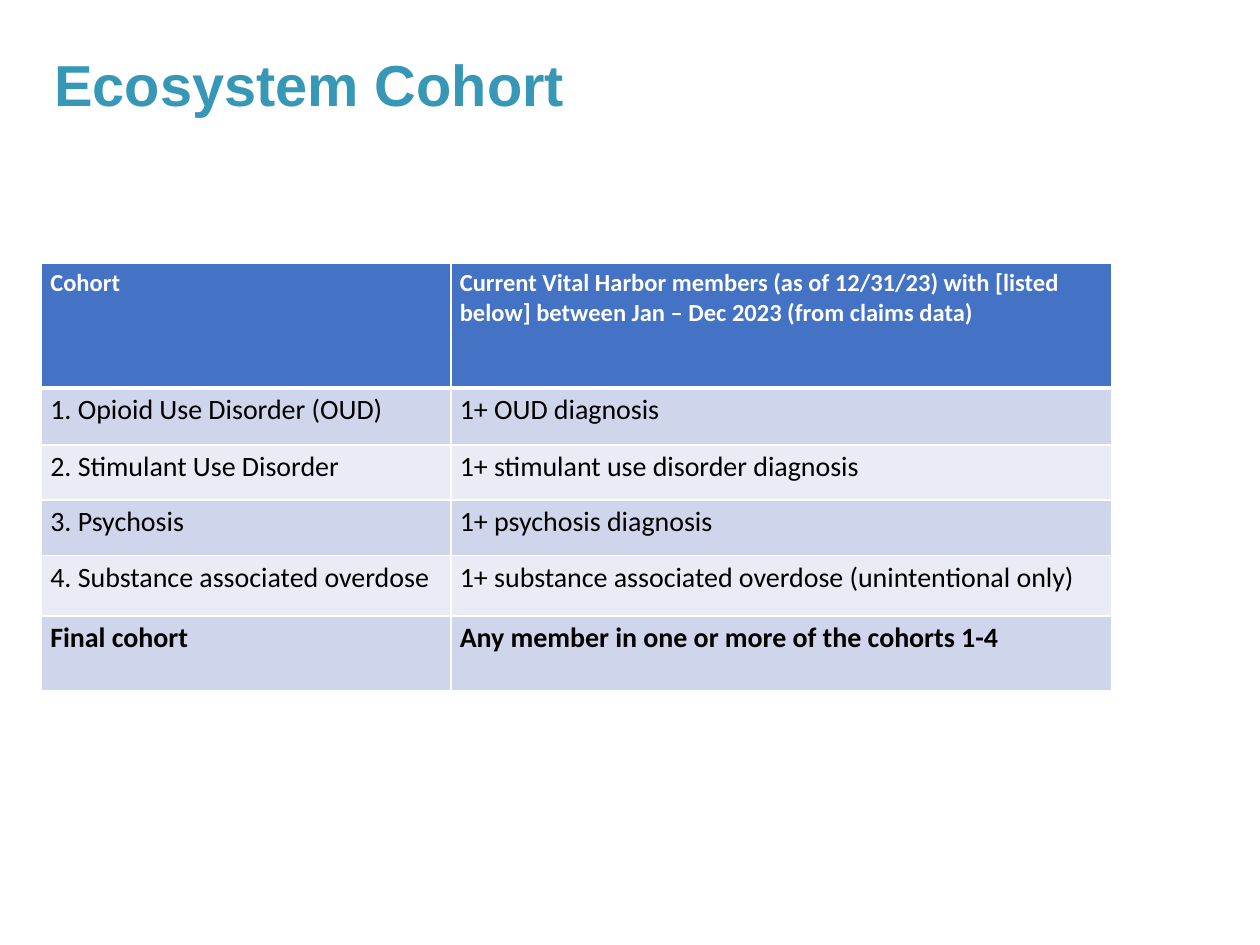
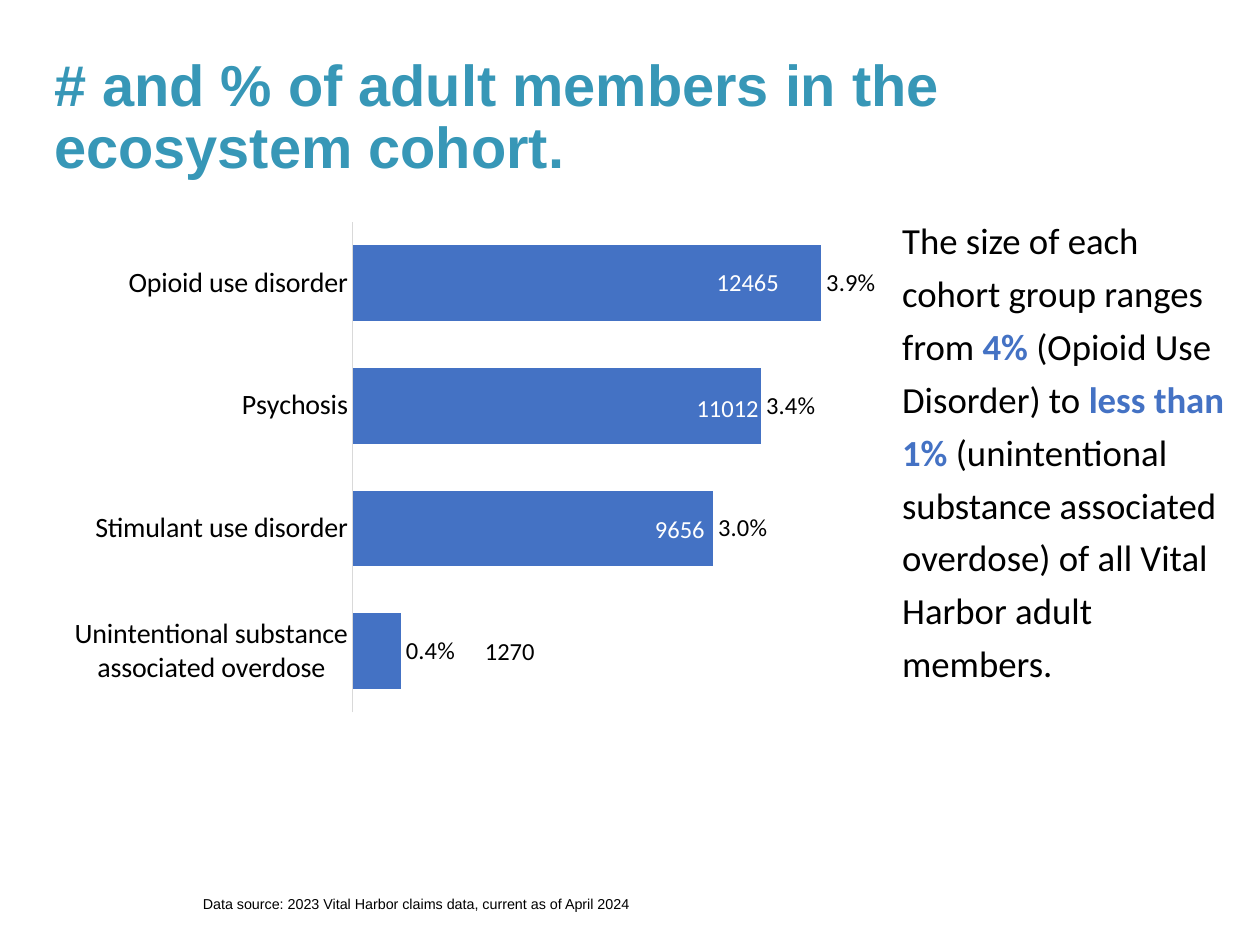
from lxml import etree
from pptx import Presentation
from pptx.chart.data import CategoryChartData
from pptx.dml.color import RGBColor
from pptx.enum.chart import XL_CHART_TYPE, XL_LABEL_POSITION, XL_TICK_MARK
from pptx.enum.text import MSO_ANCHOR, MSO_AUTO_SIZE, PP_ALIGN
from pptx.oxml import parse_xml
from pptx.oxml.ns import nsdecls, qn
from pptx.util import Inches, Pt

BAR_CLUSTERED = XL_CHART_TYPE.BAR_CLUSTERED
OUTSIDE_END = XL_LABEL_POSITION.OUTSIDE_END
NO_TICKS = XL_TICK_MARK.NONE
TOP, MIDDLE = MSO_ANCHOR.TOP, MSO_ANCHOR.MIDDLE
NO_AUTOFIT = MSO_AUTO_SIZE.NONE
LEFT = PP_ALIGN.LEFT

COLORS = {name: RGBColor.from_string(value) for name, value in {
    "title": "3797B7",
    "accent": "4472C4",
    "band_dark": "CFD5EA",
    "band_light": "E9EBF5",
    "axis": "D9D9D9",
    "text": "000000",
    "white": "FFFFFF",
}.items()}
HEADING_FONT, BODY_FONT = "Arial", "Calibri"


def style_font(font, size, color="text", bold=False, name=BODY_FONT):
    font.name = name
    font.size = Pt(size)
    font.bold = bold
    font.color.rgb = COLORS[color]


def add_titled_page(deck, layout_index, title_text):
    page = deck.slides.add_slide(deck.slide_layouts[layout_index])
    title = page.shapes.title
    title.left, title.top = Inches(0.33), Inches(0.4)
    title.width, title.height = Inches(9.18), Inches(1.49)
    frame = title.text_frame
    frame.text = title_text
    frame.auto_size = NO_AUTOFIT
    frame.vertical_anchor = TOP
    para = frame.paragraphs[0]
    para.alignment = LEFT
    para.line_spacing = 0.9
    style_font(para.runs[0].font, 33, "title", True, HEADING_FONT)
    return page


deck = Presentation()
deck.slide_width, deck.slide_height = Inches(10), Inches(7.5)

# Cohort definitions
page = add_titled_page(deck, 5, "Ecosystem Cohort")
cohort_rows = [
    ("Cohort", "Current Vital Harbor members (as of 12/31/23) with [listed below] "
               "between Jan – Dec 2023 (from claims data)"),
    ("1. Opioid Use Disorder (OUD)", "1+ OUD diagnosis"),
    ("2. Stimulant Use Disorder", "1+ stimulant use disorder diagnosis"),
    ("3. Psychosis", "1+ psychosis diagnosis"),
    ("4. Substance associated overdose",
     "1+ substance associated overdose (unintentional only)"),
    ("Final cohort", "Any member in one or more of the cohorts 1-4"),
]
row_heights = [0.99, 0.45, 0.44, 0.44, 0.48, 0.59]
column_widths = [3.25, 5.24]
last_row = len(cohort_rows) - 1

table = page.shapes.add_table(
    len(cohort_rows), len(column_widths), Inches(0.33), Inches(2.09),
    Inches(sum(column_widths)), Inches(sum(row_heights))).table
for column, width in zip(table.columns, column_widths):
    column.width = Inches(width)

for row_index, (texts, height) in enumerate(zip(cohort_rows, row_heights)):
    table.rows[row_index].height = Inches(height)
    is_header = row_index == 0
    if is_header:
        fill_color = "accent"
    else:
        fill_color = "band_dark" if row_index % 2 else "band_light"
    for cell, text in zip(table.rows[row_index].cells, texts):
        cell.text = text
        cell.margin_left = cell.margin_right = Inches(0.07)
        cell.margin_top = cell.margin_bottom = Inches(0.04)
        style_font(cell.text_frame.paragraphs[0].runs[0].font,
                   14 if is_header else 16,
                   "white" if is_header else "text",
                   row_index in (0, last_row))
        edge_widths = {"lnL": 1, "lnR": 1,
                       "lnT": 3 if row_index == 1 else 1,
                       "lnB": 3 if is_header else 1}
        properties = cell._tc.get_or_add_tcPr()
        for edge, width in edge_widths.items():
            properties.append(parse_xml(
                f'<a:{edge} {nsdecls("a")} w="{Pt(width)}"><a:solidFill>'
                f'<a:srgbClr val="{COLORS["white"]}"/></a:solidFill></a:{edge}>'))
        cell.fill.solid()
        cell.fill.fore_color.rgb = COLORS[fill_color]

# Cohort sizes
page = add_titled_page(deck, 1, "# and % of adult members in the ecosystem cohort.")

summary = page.placeholders[1]
summary.left, summary.top = Inches(7.06), Inches(1.61)
summary.width, summary.height = Inches(2.83), Inches(4.39)
summary.text_frame.auto_size = NO_AUTOFIT
para = summary.text_frame.paragraphs[0]
para.space_before = Pt(0)
para.line_spacing = 1.2
para_properties = para._p.get_or_add_pPr()
para_properties.set("marL", "0")
para_properties.set("indent", "0")
etree.SubElement(para_properties, qn("a:buNone"))
for text, highlighted in [
    ("The size of each cohort group ranges from ", False),
    ("4% ", True),
    ("(Opioid Use Disorder) to ", False),
    ("less than 1% ", True),
    ("(unintentional substance associated overdose) of all "
     "Vital Harbor adult members.", False),
]:
    span = para.add_run()
    span.text = text
    style_font(span.font, 21, "accent" if highlighted else "text", highlighted)

chart_data = CategoryChartData(number_format="0.0%")
chart_data.categories = ["Unintentional substance associated overdose",
                         "Stimulant use disorder", "Psychosis",
                         "Opioid use disorder"]
chart_data.add_series("Series 1", [0.004, 0.03, 0.034, 0.039])
chart = page.shapes.add_chart(BAR_CLUSTERED, Inches(0.15), Inches(1.61),
                              Inches(6.8), Inches(4.2), chart_data).chart
chart.has_legend = False
chart.has_title = False
style_font(chart.font, 10)

category_axis = chart.category_axis
category_axis.major_tick_mark = category_axis.minor_tick_mark = NO_TICKS
category_axis.format.line.color.rgb = COLORS["axis"]
category_axis.format.line.width = Pt(0.75)
style_font(category_axis.tick_labels.font, 16)

value_axis = chart.value_axis
value_axis.minimum_scale, value_axis.maximum_scale = 0, 0.04
value_axis.major_unit = 0.01
value_axis.has_major_gridlines = False
value_axis.visible = False

plot = chart.plots[0]
plot.gap_width, plot.overlap = 62, -61
plot.vary_by_categories = False
bars = plot.series[0]
bars.format.fill.solid()
bars.format.fill.fore_color.rgb = COLORS["accent"]
plot.has_data_labels = True
labels = plot.data_labels
labels.show_value = True
labels.position = OUTSIDE_END
labels.number_format, labels.number_format_is_linked = "0.0%", False
style_font(labels.font, 14)

plot_area = chart._chartSpace.chart.plotArea
for old_layout in plot_area.findall(qn("c:layout")):
    plot_area.remove(old_layout)
plot_area.insert(0, parse_xml(
    f'<c:layout {nsdecls("c")}><c:manualLayout><c:layoutTarget val="inner"/>'
    '<c:xMode val="edge"/><c:yMode val="edge"/><c:x val="0.39"/><c:y val="0.036"/>'
    '<c:w val="0.561"/><c:h val="0.927"/></c:manualLayout></c:layout>'))

for count, left, top, width, color in [
    ("12465", 5.59, 2.07, 0.7, "white"),
    ("11012", 5.43, 3.07, 0.7, "white"),
    ("9656", 5.1, 4.03, 0.6, "white"),
    ("1270", 3.75, 5, 0.6, "text"),
]:
    box = page.shapes.add_textbox(Inches(left), Inches(top), Inches(width), Inches(0.34))
    box.text_frame.text = count
    box.text_frame.word_wrap = False
    style_font(box.text_frame.paragraphs[0].runs[0].font, 14, color)

source_box = page.shapes.add_textbox(Inches(1.54), Inches(7.02), Inches(4), Inches(0.3))
frame = source_box.text_frame
frame.text = "Data source: 2023 Vital Harbor claims data, current as of April 2024"
frame.word_wrap = True
frame.vertical_anchor = MIDDLE
frame.margin_left = frame.margin_right = Inches(0.07)
frame.margin_top = frame.margin_bottom = Inches(0.04)
style_font(frame.paragraphs[0].runs[0].font, 8.2, name=HEADING_FONT)

deck.save("out.pptx")
